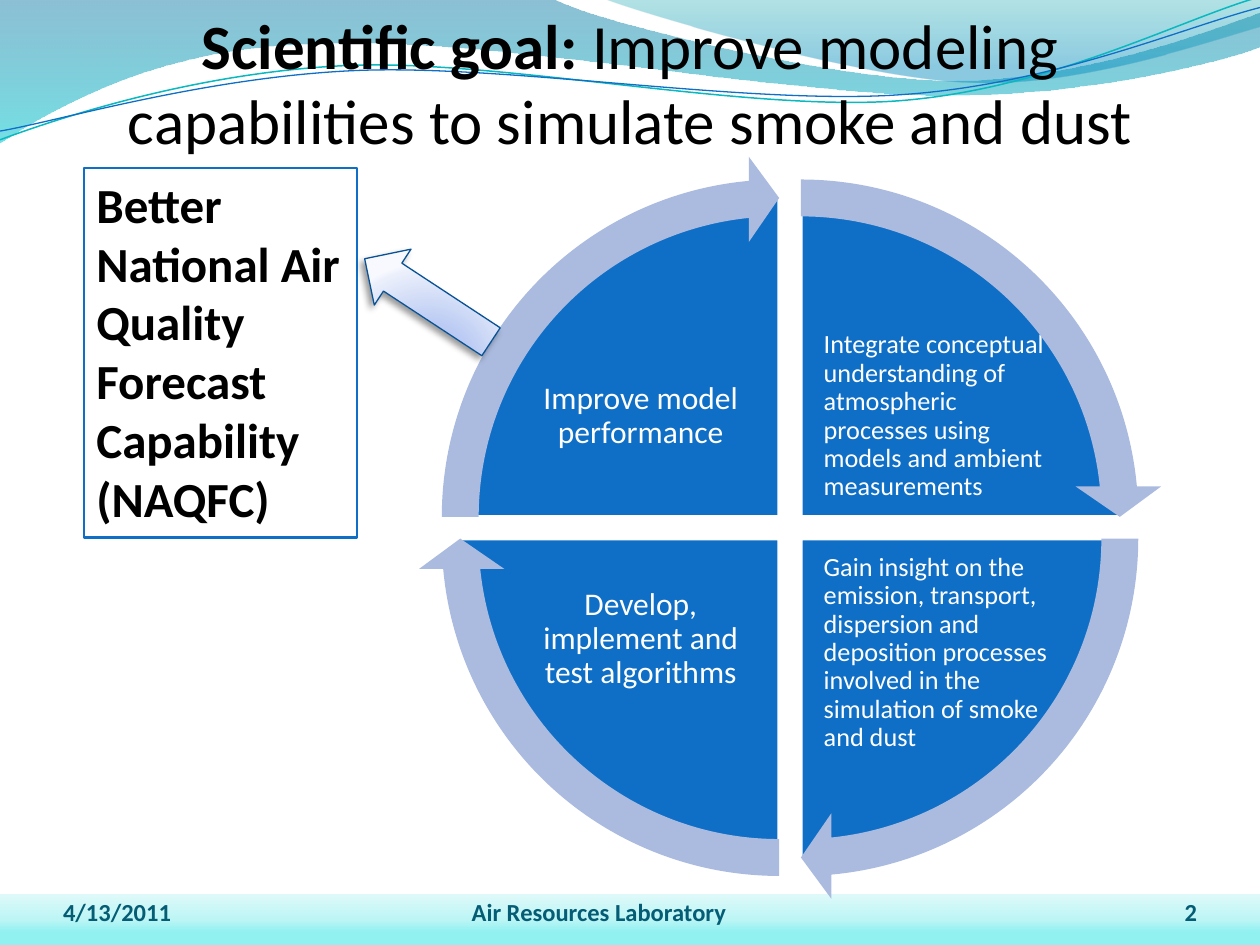
from math import cos, radians, sin

from lxml import etree
from pptx import Presentation
from pptx.dml.color import RGBColor
from pptx.enum.shapes import MSO_SHAPE
from pptx.enum.text import MSO_ANCHOR, MSO_AUTO_SIZE, PP_ALIGN
from pptx.oxml import parse_xml
from pptx.oxml.ns import nsdecls, qn
from pptx.util import Pt

RECT, PIE = MSO_SHAPE.RECTANGLE, MSO_SHAPE.PIE
CIRCULAR_ARROW, UP_ARROW = MSO_SHAPE.CIRCULAR_ARROW, MSO_SHAPE.UP_ARROW
LEFT, CENTER, RIGHT = PP_ALIGN.LEFT, PP_ALIGN.CENTER, PP_ALIGN.RIGHT
TOP, MIDDLE, BOTTOM = MSO_ANCHOR.TOP, MSO_ANCHOR.MIDDLE, MSO_ANCHOR.BOTTOM

COLORS = {
    "black": "000000", "white": "FFFFFF", "blue": "0F6FC6", "ring": "ABBBDF",
    "footer": "045D75", "teal": "0AB8BF", "edge": "095295",
}
FOOTER_BAND = [(25, "91F1F1", 100), (50, "BDF5F5", 100), (100, "DFF9F9", 100)]
LEFT_WAVE = [(0, "0074A1", 45), (100, "00C6CF", 55)]
RIGHT_WAVE = [(0, "00A1A9", 30), (80, "008BBF", 45)]
ARROW_GLOW = [(0, "8DA8E3", 100), (43, "BBCBF3", 100),
              (93, "EAEFFB", 100), (100, "F7F9FF", 100)]

LEFT_WAVE_PATH = [
    (0, 0), (316.8, 0),
    (342.7, 13, 478.1, 46.1, 545.8, 46.1), (614.2, 46.1, 689.8, 18.7, 720, 7.2),
    (720.7, 26.6),
    (707.8, 32.4, 626.4, 55.4, 537.1, 54.7), (447.8, 54.7, 275, 20.9, 185, 25.2),
    (92.9, 25.9, 33.1, 60.5, -0.7, 82.1),
]
RIGHT_WAVE_PATH = [
    (344.9, -0.7), (366.5, 7.9, 491, 44.6, 553.7, 46.8),
    (616.3, 49.7, 691.9, 23, 720, 15.1), (720, 0),
]
TEAL_LINE_PATH = [
    (0, 79.9), (34.6, 67, 113.8, 41, 199.4, 37.4),
    (284.4, 33.8, 427, 64.1, 513.4, 57.6), (599.8, 51.1, 675.4, 10.8, 718.6, -1.4),
]
BLUE_LINE_PATH = [
    (0, 74.9), (33.8, 69.1, 118.1, 43.9, 203.8, 40.3),
    (290.2, 36.7, 429.8, 60.5, 516.2, 54), (601.9, 48.2, 677.5, 15.1, 720, 4.3),
]

QUADRANTS = [
    (1, -1, 162, "Integrate conceptual understanding of atmospheric processes "
     "using models and ambient measurements", 15, LEFT, MIDDLE),
    (1, 1, 0, "Gain insight on the emission, transport, dispersion and deposition "
     "processes involved in the simulation of smoke and dust", 15, LEFT, TOP),
    (-1, 1, 54, "Develop, implement and test algorithms", 18, CENTER, MIDDLE),
    (-1, -1, 108, "Improve model performance", 18, CENTER, MIDDLE),
]


def color(name):
    return RGBColor.from_string(COLORS[name])


def write(p, text, size=14, fill="black", bold=False, font="Calibri"):
    r = p.add_run()
    r.text = text
    r.font.name, r.font.size, r.font.bold = font, Pt(size), bold
    r.font.color.rgb = color(fill)


def turn(seg, angle, cx, cy):
    c, s = cos(radians(angle)), sin(radians(angle))
    return [(Pt(cx + (x - cx) * c - (y - cy) * s), Pt(cy + (x - cx) * s + (y - cy) * c))
            for x, y in zip(seg[::2], seg[1::2])]


class Slide:
    def __init__(self, s, font="Calibri"):
        self.s, self.font = s, font

    def style(self, sp, fill=None, line=None, width=1):
        sp.shadow.inherit = False
        if fill:
            sp.fill.solid()
            sp.fill.fore_color.rgb = color(fill)
        else:
            sp.fill.background()
        if line:
            sp.line.color.rgb = color(line)
            sp.line.width = Pt(width)
        else:
            sp.line.fill.background()
        return sp

    def shape(self, kind, x, y, w, h, adj=(), **style):
        sp = self.s.shapes.add_shape(kind, Pt(x), Pt(y), Pt(w), Pt(h))
        for i, value in enumerate(adj):
            sp.adjustments[i] = value
        return self.style(sp, **style)

    def curve(self, path, closed=False, tilt=0, center=(0, 0), **style):
        segs = [turn(seg, tilt, *center) for seg in path]
        builder = self.s.shapes.build_freeform(*segs[0][0])
        builder.add_line_segments([seg[-1] for seg in segs[1:]], close=closed)
        sp = builder.convert_to_shape()
        for node, seg in zip(list(sp._element.iter(qn("a:lnTo"))), segs[1:]):
            if len(seg) == 3:
                bezier = etree.Element(qn("a:cubicBezTo"))
                for x, y in seg:
                    etree.SubElement(bezier, qn("a:pt"),
                                     x=str(x - sp.left), y=str(y - sp.top))
                node.getparent().replace(node, bezier)
        sp.rotation = -tilt
        return self.style(sp, **style)

    def gradient(self, sp, stops, shade):
        gs = "".join(
            f'<a:gs pos="{pos * 1000}"><a:srgbClr val="{rgb}">'
            f'<a:alpha val="{alpha * 1000}"/></a:srgbClr></a:gs>'
            for pos, rgb, alpha in stops)
        spPr = sp._element.spPr
        spPr.replace(spPr.find(qn("a:noFill")), parse_xml(
            f'<a:gradFill {nsdecls("a")} rotWithShape="1">'
            f"<a:gsLst>{gs}</a:gsLst>{shade}</a:gradFill>"))

    def drop_shadow(self, sp, blur, dist, angle, alpha):
        effects = sp._element.spPr.find(qn("a:effectLst"))
        shadow = etree.SubElement(
            effects, qn("a:outerShdw"), blurRad=str(Pt(blur)), dist=str(Pt(dist)),
            dir=str(angle * 60000), rotWithShape="0")
        rgb = etree.SubElement(shadow, qn("a:srgbClr"), val=COLORS["black"])
        etree.SubElement(rgb, qn("a:alpha"), val=str(alpha * 1000))

    def fill_text(self, sp, paragraphs, align=LEFT, anchor=TOP, inset=None,
                  spacing=None, **fmt):
        tf = sp.text_frame
        tf.word_wrap, tf.vertical_anchor = True, anchor
        if inset is not None:
            tf.margin_left = tf.margin_right = Pt(inset)
            tf.margin_top = tf.margin_bottom = Pt(inset)
        for i, text in enumerate(paragraphs):
            p = tf.add_paragraph() if i else tf.paragraphs[0]
            p.alignment = align
            if spacing:
                p.line_spacing = spacing
            write(p, text, font=self.font, **fmt)

    def text(self, text, x, y, w, h, **fmt):
        sp = self.s.shapes.add_textbox(Pt(x), Pt(y), Pt(w), Pt(h))
        self.fill_text(sp, [text], **fmt)

    def title(self, lead, rest, x, y, w, h):
        sp = self.s.shapes.title
        sp.left, sp.top, sp.width, sp.height = Pt(x), Pt(y), Pt(w), Pt(h)
        sp._element.getparent().append(sp._element)
        tf = sp.text_frame
        tf.auto_size = MSO_AUTO_SIZE.NONE
        self.fill_text(sp, [lead], align=CENTER, anchor=BOTTOM, inset=0,
                       size=36, bold=True)
        tf.margin_top = Pt(3.6)
        write(tf.paragraphs[0], rest, size=36, font=self.font)


def draw_background(slide):
    down, up = (f'<a:lin ang="{angle * 60000}" scaled="0"/>' for angle in (90, 270))
    slide.gradient(slide.shape(RECT, 0, 510.8, 720, 29.2), FOOTER_BAND, up)
    slide.gradient(slide.curve(LEFT_WAVE_PATH, closed=True), LEFT_WAVE, down)
    slide.gradient(slide.curve(RIGHT_WAVE_PATH, closed=True), RIGHT_WAVE, down)
    slide.curve(TEAL_LINE_PATH, tilt=2.7, center=(359.3, 41.4), line="teal", width=0.85)
    slide.curve(BLUE_LINE_PATH, tilt=2.7, center=(359.6, 42.5), line="blue", width=0.75)


def draw_cycle(slide, cx=451.5, cy=301.6, gap=6.2, pie=368, ring=413.3):
    for dx, dy, start, text, size, align, anchor in QUADRANTS:
        x, y = cx + dx * gap - pie / 2, cy + dy * gap - pie / 2
        slide.shape(PIE, x, y, pie, pie, adj=(start, (start + 54) % 216),
                    fill="blue", line="white", width=2)
        slide.text(text, 469.2 if dx > 0 else 298.1, 314.9 if dy > 0 else 187.6,
                   136.1, 100.8, size=size, align=align, anchor=anchor,
                   inset=size / 10, spacing=0.9, fill="white")
    for dx, dy, start, *_ in QUADRANTS:
        x, y = cx + dx * gap - ring / 2, cy + dy * gap - ring / 2
        slide.shape(CIRCULAR_ARROW, x, y, ring, ring, fill="ring",
                    adj=(5.1 / 100, 3.28, start + 50.72, start, 5.9 / 100))


def draw_outcome(slide):
    box = slide.shape(RECT, 48, 96, 156, 211, line="blue", width=1.5)
    slide.fill_text(box, ["Better National Air Quality Forecast Capability", "(NAQFC)"],
                    size=28, bold=True)
    box.text_frame.auto_size = MSO_AUTO_SIZE.SHAPE_TO_FIT_TEXT
    arrow = slide.shape(UP_ARROW, 225.4, 128.4, 38.2, 86.4, line="edge", width=0.75)
    arrow.rotation = 303.3
    slide.gradient(arrow, ARROW_GLOW, '<a:path path="circle"><a:fillToRect '
                   'l="50000" t="130000" r="50000" b="-30000"/></a:path>')
    slide.drop_shadow(arrow, blur=4, dist=3, angle=135, alpha=40)


def main():
    prs = Presentation()
    prs.slide_width, prs.slide_height = Pt(720), Pt(540)
    slide = Slide(prs.slides.add_slide(prs.slide_layouts[5]))
    draw_background(slide)
    slide.title("Scientific goal: ",
                "Improve modeling capabilities to simulate smoke and dust", 36, 0, 648, 90)
    draw_cycle(slide)
    for text, x, w, align in [("Air Resources Laboratory", 210.2, 264.2, CENTER),
                              ("2", 624, 60, RIGHT), ("4/13/2011", 36, 168, LEFT)]:
        slide.text(text, x, 500.4, w, 28.8, align=align, anchor=BOTTOM, inset=0,
                   fill="footer", bold=True)
    draw_outcome(slide)
    prs.save("out.pptx")


if __name__ == "__main__":
    main()
